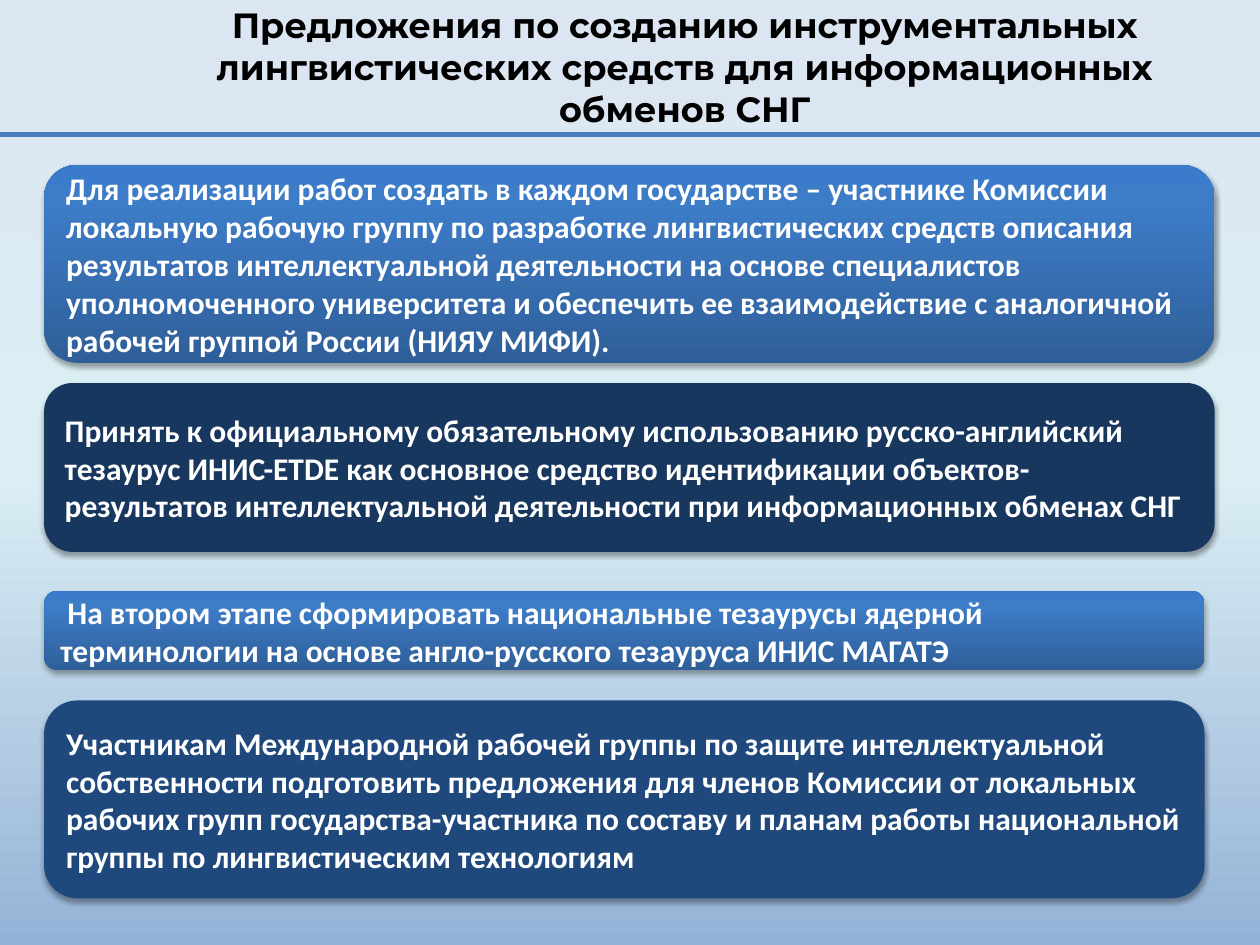
from dataclasses import dataclass

from lxml import etree
from pptx import Presentation
from pptx.dml.color import RGBColor
from pptx.enum import shapes, text
from pptx.oxml import ns
from pptx.util import Inches, Pt


@dataclass(frozen=True)
class Theme:
    background: tuple = ((0, "DCE6F2"), (50, "DBEEF4"), (100, "95B3D7"))
    bright: tuple = ((0, "2F5F99"), (80, "3D7CC7"), (100, "3A7CCB"))
    navy: str = "17375E"
    blue: str = "1F497D"
    rule: str = "4B7EBC"
    light: str = "FFFFFF"
    dark: str = "000000"
    title_font: str = "Montserrat"
    body_font: str = "Calibri"
    title_size: int = 20
    body_size: int = 18


THEME = Theme()

TITLE = ("Предложения по созданию инструментальных лингвистических средств "
         "для информационных обменов СНГ")

# Top, width, height, fill and wording of each proposal
PROPOSALS = [
    (1.31, 9.29, 1.57, THEME.bright,
     "Для реализации работ создать в каждом государстве – участнике Комиссии "
     "локальную рабочую группу по разработке лингвистических средств описания "
     "результатов интеллектуальной деятельности на основе специалистов "
     "уполномоченного университета и обеспечить ее взаимодействие с аналогичной "
     "рабочей группой России (НИЯУ МИФИ)."),
    (3.04, 9.29, 1.34, THEME.navy,
     "Принять к официальному обязательному использованию русско-английский "
     "тезаурус ИНИС-ETDE как основное средство идентификации объектов- "
     "результатов интеллектуальной деятельности при информационных обменах СНГ"),
    (4.69, 9.21, 0.63, THEME.bright,
     " На втором этапе сформировать национальные тезаурусы ядерной "
     "терминологии на основе англо-русского тезауруса ИНИС МАГАТЭ"),
    (5.56, 9.21, 1.57, THEME.blue,
     "Участникам Международной рабочей группы по защите интеллектуальной "
     "собственности подготовить предложения для членов Комиссии от локальных "
     "рабочих групп государства-участника по составу и планам работы "
     "национальной группы по лингвистическим технологиям"),
]


def add_element(parent, tag, **attributes):
    element = etree.SubElement(parent, ns.qn(tag))
    for name, value in attributes.items():
        element.set(name, str(value))
    return element


def set_gradient(fill, owner, stops, angle):
    """Fill with any number of stops; the angle runs counter-clockwise."""
    fill.gradient()
    fill.gradient_angle = angle
    stop_list = owner.find(".//" + ns.qn("a:gsLst"))
    for stop in list(stop_list):
        stop_list.remove(stop)
    for position, color in stops:
        stop = add_element(stop_list, "a:gs", pos=position * 1000)
        add_element(stop, "a:srgbClr", val=color)


def add_shadow(shape):
    shape.shadow.inherit = False
    effects = shape._element.spPr.find(ns.qn("a:effectLst"))
    shadow = add_element(effects, "a:outerShdw", blurRad=Pt(3.1), dist=Pt(1.8),
                         dir=90 * 60000, rotWithShape=0)
    color = add_element(shadow, "a:srgbClr", val=THEME.dark)
    add_element(color, "a:alpha", val=35000)


def write_text(shape, words, *, font, size, color, align):
    frame = shape.text_frame
    frame.word_wrap = True
    frame.vertical_anchor = text.MSO_ANCHOR.MIDDLE
    paragraph = frame.paragraphs[0]
    paragraph.alignment = align
    run = paragraph.add_run()
    run.text = words
    run.font.name = font
    run.font.size = Pt(size)
    run.font.bold = True
    run.font.color.rgb = RGBColor.from_string(color)


def add_rule(slide, top):
    rule = slide.shapes.add_connector(
        shapes.MSO_CONNECTOR.STRAIGHT, Inches(0), Inches(top), Inches(10), Inches(top))
    rule.line.color.rgb = RGBColor.from_string(THEME.rule)
    rule.line.width = Pt(3)
    add_element(rule._element.spPr, "a:effectLst")


def add_proposal(slide, top, width, height, fill, words):
    shape = slide.shapes.add_shape(
        shapes.MSO_SHAPE.ROUNDED_RECTANGLE,
        Inches(0.35), Inches(top), Inches(width), Inches(height))
    if isinstance(fill, str):
        shape.fill.solid()
        shape.fill.fore_color.rgb = RGBColor.from_string(fill)
    else:
        set_gradient(shape.fill, shape._element, fill, 90)
    shape.line.fill.background()
    add_shadow(shape)
    write_text(shape, words, font=THEME.body_font, size=THEME.body_size,
               color=THEME.light, align=text.PP_ALIGN.LEFT)


def add_title(slide):
    # Placed so that all three lines stay clear of the rule
    box = slide.shapes.add_textbox(Inches(1.14), Inches(0.13), Inches(8.59), Inches(0.79))
    write_text(box, TITLE, font=THEME.title_font, size=THEME.title_size,
               color=THEME.dark, align=text.PP_ALIGN.CENTER)


def main():
    presentation = Presentation()
    presentation.slide_width = Inches(10)
    presentation.slide_height = Inches(7.5)
    slide = presentation.slides.add_slide(presentation.slide_layouts[6])

    # Background and rule under the title
    set_gradient(slide.background.fill, slide._element, THEME.background, 270)
    add_rule(slide, 1.07)

    # Proposals, then the title
    for proposal in PROPOSALS:
        add_proposal(slide, *proposal)
    add_title(slide)

    presentation.save("out.pptx")


if __name__ == "__main__":
    main()
